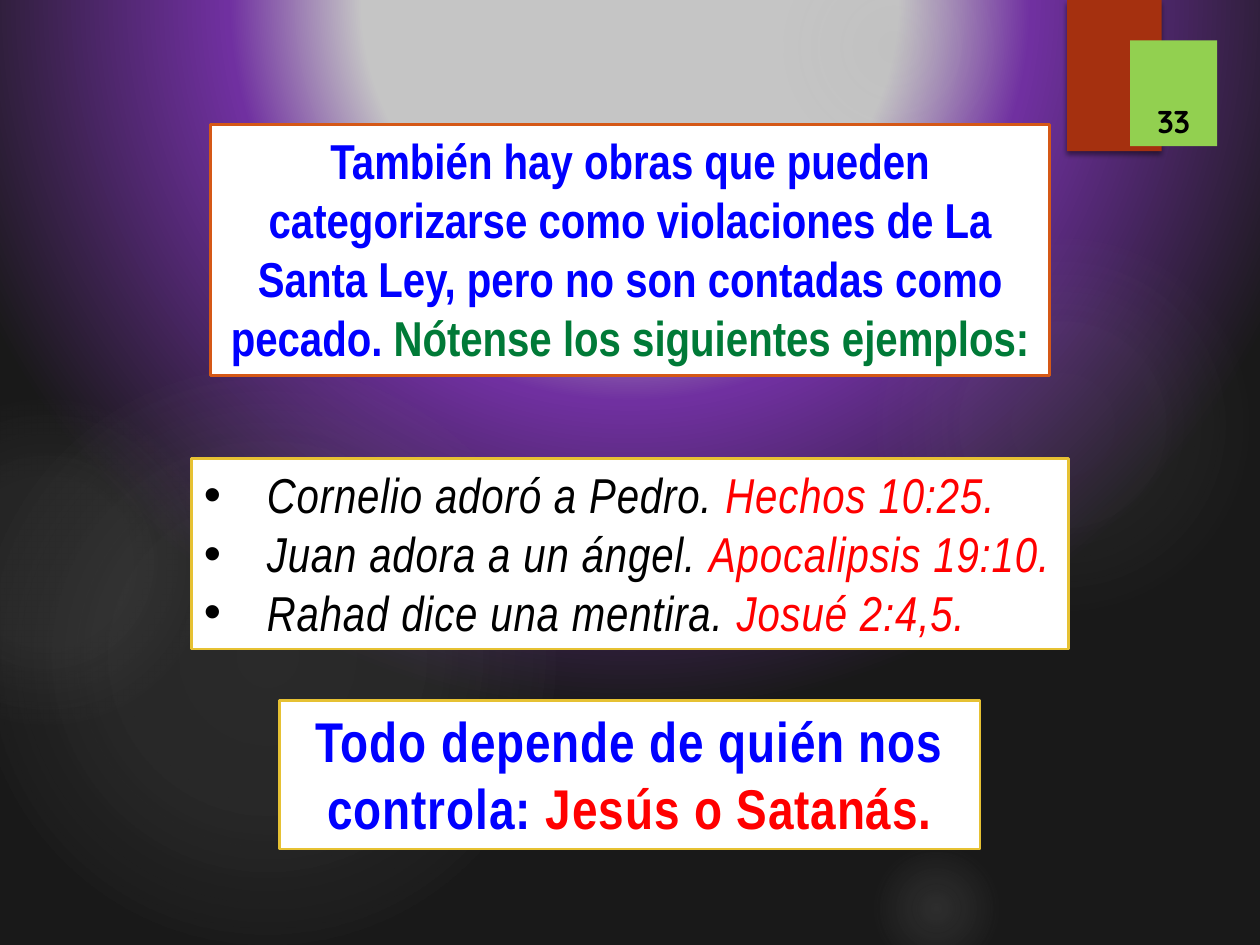
from lxml.etree import SubElement
from pptx import Presentation
from pptx.dml.color import RGBColor as RGB
from pptx.enum.shapes import MSO_SHAPE as SHAPE
from pptx.enum.text import MSO_ANCHOR as ANCHOR, MSO_AUTO_SIZE as AUTO, PP_ALIGN as ALIGN
from pptx.oxml import parse_xml
from pptx.oxml.ns import nsdecls, qn
from pptx.util import Inches, Pt

BLACK, WHITE = RGB(0, 0, 0), RGB(255, 255, 255)
BLUE, RED, GREEN = RGB(0, 0, 255), RGB(255, 0, 0), RGB(0, 0x7A, 0x37)
RUST, LIME = RGB(0xA5, 0x30, 0x0F), RGB(0x92, 0xD0, 0x50)
ORANGE, GOLD = RGB(0xD5, 0x58, 0x16), RGB(0xE6, 0xC1, 0x33)
SILVER, PURPLE, CHARCOAL = RGB(0xC5, 0xC5, 0xC5), RGB(0x70, 0x30, 0xA0), RGB(0x19, 0x19, 0x19)
MIST = RGB(0xAD, 0xAD, 0xAD)
COLUMNS = 10

# left, top, diameter, gradient as (position %, opacity %)
GLOWS = [
    (6.89, 1.83, 3.08, [(0, 7), (36, 6), (69, 0)]),
    (6.22, -0.5, 1.75, [(0, 14), (36, 7), (73, 0)]),
    (6.89, 6.67, 1.08, [(0, 14), (36, 7), (66, 0)]),
    (-0.17, 2.92, 4.58, [(0, 11), (36, 10), (75, 0)]),
    (-0.92, 3.17, 2.58, [(0, 8), (36, 8), (72, 0)]),
]
INTRO = [[("También hay obras que pueden categorizarse como violaciones de La Santa Ley, "
           "pero no son contadas como pecado. ", BLUE),
          ("Nótense los siguientes ejemplos:", GREEN)]]
EXAMPLES = [[(deed + " ", BLACK), (verse, RED)] for deed, verse in [
    ("Cornelio adoró a Pedro.", "Hechos 10:25."),
    ("Juan adora a un ángel.", "Apocalipsis 19:10."),
    ("Rahad dice una mentira.", "Josué 2:4,5."),
]]
CONCLUSION = [[("Todo depende de quién nos controla: ", BLUE), ("Jesús o Satanás.", RED)]]


def radial(stops, focus=(50, 50, 50, 50)):
    """Circular gradient from (position %, colour, opacity %) stops."""
    gs = "".join(
        f'<a:gs pos="{pos * 1000}"><a:srgbClr val="{color}">'
        f'<a:alpha val="{alpha * 1000}"/></a:srgbClr></a:gs>' for pos, color, alpha in stops)
    edges = " ".join(f'{side}="{v * 1000}"' for side, v in zip("ltrb", focus))
    return parse_xml(
        f'<a:gradFill {nsdecls("a")} rotWithShape="1"><a:gsLst>{gs}</a:gsLst>'
        f'<a:path path="circle"><a:fillToRect {edges}/></a:path></a:gradFill>')


def swap_fill(parent, fill):
    parent.replace(parent.find(qn("a:solidFill")), fill)


class Deck:
    """Slide style; lengths are in square grid units, ten to the slide width."""
    font = "Arial Narrow"

    def __init__(self):
        self.prs = Presentation()
        self.prs.slide_width, self.prs.slide_height = Inches(10), Inches(7.5)
        self.unit = self.prs.slide_width / COLUMNS
        self.s = self.prs.slides.add_slide(self.prs.slide_layouts[6])

    def background(self, stops, focus):
        self.s.background.fill.solid()
        bg = self.s.element.cSld.find(qn("p:bg")).find(qn("p:bgPr"))
        swap_fill(bg, radial(stops, focus))

    def shape(self, kind, x, y, w, h, fill, line=None):
        sp = self.s.shapes.add_shape(kind, *(round(v * self.unit) for v in (x, y, w, h)))
        sp.shadow.inherit = False
        sp.fill.solid()
        sp.fill.fore_color.rgb = fill
        if line is None:
            sp.line.fill.background()
        else:
            sp.line.color.rgb = line
            sp.line.width = Pt(1.5)
        return sp

    def glow(self, x, y, size, stops):
        sp = self.shape(SHAPE.OVAL, x, y, size, size, MIST)
        swap_fill(sp.element.spPr, radial([(pos, MIST, alpha) for pos, alpha in stops]))

    def ribbon(self, x, y, w, h):
        sp = self.shape(SHAPE.RECTANGLE, x, y, w, h, RUST)
        sp.element.spPr.find(qn("a:effectLst")).append(parse_xml(
            f'<a:outerShdw {nsdecls("a")} blurRad="{Pt(3)}" dist="{Pt(2)}" dir="5400000" '
            'algn="t" rotWithShape="0"><a:srgbClr val="000000"><a:alpha val="45000"/>'
            '</a:srgbClr></a:outerShdw>'))

    def page_number(self, x, y, w, h, number):
        sp = self.shape(SHAPE.RECTANGLE, x, y, w, h, LIME)
        tf = sp.text_frame
        tf.text = number
        tf.vertical_anchor = ANCHOR.BOTTOM
        p = tf.paragraphs[0]
        p.alignment = ALIGN.CENTER
        f = p.runs[0].font
        f.name, f.size, f.bold, f.color.rgb = "Quicksand", Pt(18), True, BLACK

    def panel(self, y, w, h, line, paragraphs, size=28, spacing=0, outline=0.25, bullets=False):
        """White box centred on the slide; bulleted text is italic, other text bold."""
        sp = self.shape(SHAPE.RECTANGLE, (COLUMNS - w) / 2, y, w, h, WHITE, line)
        tf = sp.text_frame
        tf.word_wrap = True
        tf.auto_size = AUTO.SHAPE_TO_FIT_TEXT
        tf.vertical_anchor = ANCHOR.TOP
        for i, parts in enumerate(paragraphs):
            p = tf.add_paragraph() if i else tf.paragraphs[0]
            p.alignment = ALIGN.LEFT if bullets else ALIGN.CENTER
            if bullets:
                self.bullet(p)
            for text, color in parts:
                r = p.add_run()
                r.text = text
                f = r.font
                f.name, f.size, f.color.rgb = self.font, Pt(size), color
                f.bold, f.italic = not bullets, bullets
                rPr = r._r.get_or_add_rPr()
                rPr.set("spc", str(round(spacing * 100)))
                rPr.insert(0, parse_xml(
                    f'<a:ln {nsdecls("a")} w="{Pt(outline)}"><a:solidFill>'
                    f'<a:srgbClr val="{color}"/></a:solidFill></a:ln>'))

    def bullet(self, p):
        pPr = p._p.get_or_add_pPr()
        pPr.set("marL", str(Inches(0.5)))
        pPr.set("indent", str(-Inches(0.5)))
        SubElement(pPr, qn("a:buFont")).set("typeface", "Arial")
        SubElement(pPr, qn("a:buChar")).set("char", "•")


def main():
    deck = Deck()
    deck.background([(34, SILVER, 100), (51, PURPLE, 100), (91, CHARCOAL, 100)],
                    (50, -80, 50, 180))
    for glow in GLOWS:
        deck.glow(*glow)
    deck.ribbon(8.47, 0, 0.75, 1.2)
    deck.page_number(8.97, 0.32, 0.69, 0.84, "33")
    deck.panel(0.99, 6.66, 1.99, ORANGE, INTRO)
    deck.panel(3.64, 6.96, 1.51, GOLD, EXAMPLES, spacing=0.5, outline=1.5, bullets=True)
    deck.panel(5.56, 5.56, 1.18, GOLD, CONCLUSION, size=32, spacing=0.5)
    deck.prs.save("out.pptx")


if __name__ == "__main__":
    main()
